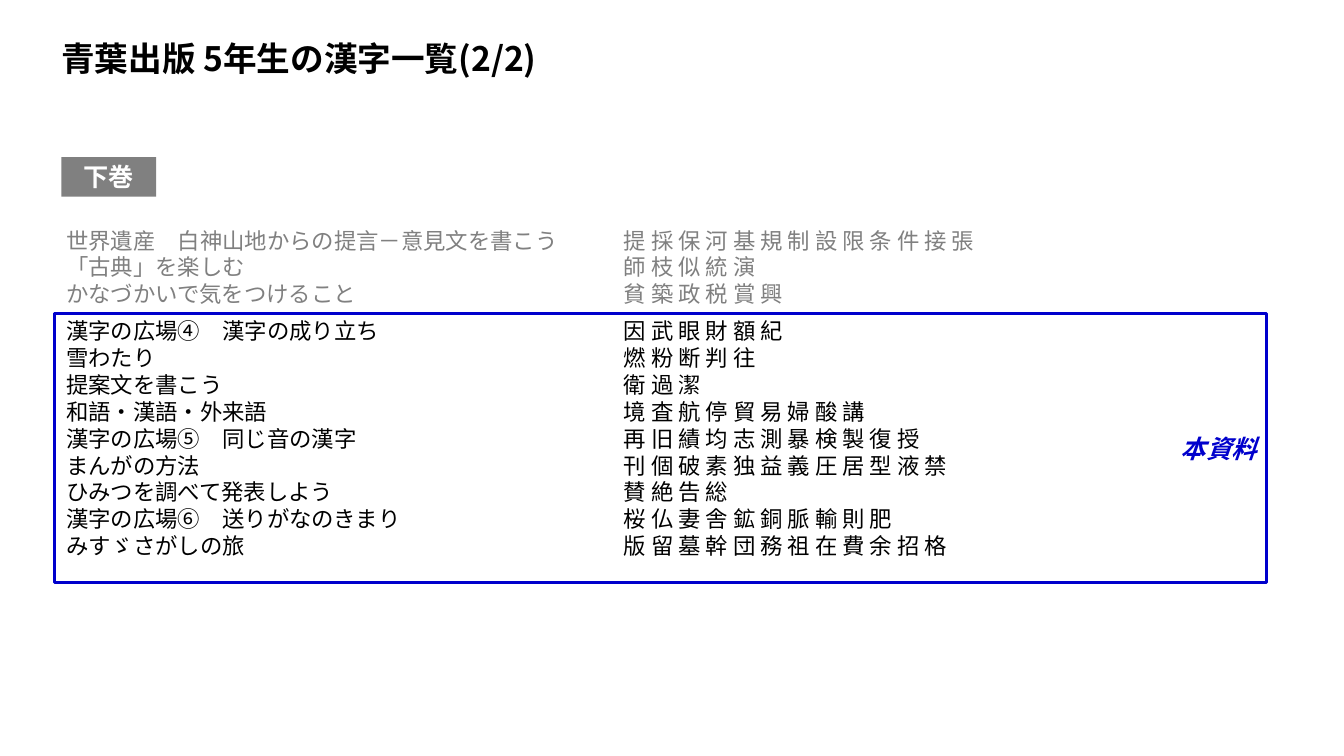
"""Build the slide listing fifth-grade kanji by textbook unit."""
from dataclasses import dataclass

from lxml.etree import SubElement
from pptx import Presentation
from pptx.dml.color import RGBColor
from pptx.enum.shapes import MSO_SHAPE
from pptx.enum.text import MSO_ANCHOR, PP_ALIGN
from pptx.oxml.ns import qn
from pptx.util import Inches, Pt


@dataclass(frozen=True)
class Theme:
    font: str = "Noto Sans CJK JP"
    black: str = "000000"
    gray: str = "808080"
    white: str = "FFFFFF"
    blue: str = "0000CC"
    title: int = 24
    label: int = 18
    body: int = 16
    leading: float = 1.2


theme = Theme()


def add_text(p, text, size=theme.body, color=theme.black, bold=False,
             italic=False, align=PP_ALIGN.LEFT, leading=None):
    p.alignment = align
    if leading:
        p.line_spacing = Pt(size * leading)
    r = p.add_run()
    r.text = text
    r.font.size = Pt(size)
    r.font.bold = bold
    r.font.italic = italic
    r.font.name = theme.font
    r.font.color.rgb = RGBColor.from_string(color)
    SubElement(r.font._element, qn("a:ea"), typeface=theme.font)


def add_box(left, top, width, height, fill=None, line=None):
    sp = slide.shapes.add_shape(MSO_SHAPE.RECTANGLE, Inches(left), Inches(top),
                                Inches(width), Inches(height))
    sp.shadow.inherit = False
    if fill:
        sp.fill.solid()
        sp.fill.fore_color.rgb = RGBColor.from_string(fill)
    else:
        sp.fill.background()
    if line:
        sp.line.color.rgb = RGBColor.from_string(line)
        sp.line.width = Pt(2)
    else:
        sp.line.fill.background()
    sp.text_frame.vertical_anchor = MSO_ANCHOR.MIDDLE
    return sp.text_frame.paragraphs[0]


prs = Presentation()
prs.slide_width, prs.slide_height = Inches(13.33), Inches(7.5)
slide = prs.slides.add_slide(prs.slide_layouts[6])

p = add_box(0.61, 1.56, 0.94, 0.39, fill=theme.gray)
add_text(p, "下巻", size=theme.label, color=theme.white, bold=True, align=PP_ALIGN.CENTER)

earlier_units = [
    ("世界遺産　白神山地からの提言－意見文を書こう", "提採保河基規制設限条件接張"),
    ("「古典」を楽しむ", "師枝似統演"),
    ("かなづかいで気をつけること", "貧築政税賞興"),
]
covered_units = [
    ("漢字の広場④　漢字の成り立ち", "因武眼財額紀"),
    ("雪わたり", "燃粉断判往"),
    ("提案文を書こう", "衛過潔"),
    ("和語・漢語・外来語", "境査航停貿易婦酸講"),
    ("漢字の広場⑤　同じ音の漢字", "再旧績均志測暴検製復授"),
    ("まんがの方法", "刊個破素独益義圧居型液禁"),
    ("ひみつを調べて発表しよう", "賛絶告総"),
    ("漢字の広場⑥　送りがなのきまり", "桜仏妻舎鉱銅脈輸則肥"),
    ("みすゞさがしの旅", "版留墓幹団務祖在費余招格"),
]

tf = slide.shapes.add_textbox(Inches(0.56), Inches(2.2), Inches(9.56), Inches(3.43)).text_frame
tf.word_wrap = True
for i, (unit, kanji) in enumerate(earlier_units + covered_units):
    p = tf.paragraphs[0] if i == 0 else tf.add_paragraph()
    color = theme.gray if i < len(earlier_units) else theme.black
    add_text(p, f"{unit}\t{' '.join(kanji)}", color=color, leading=theme.leading)
    if i == len(earlier_units):
        p.space_before = Pt(7.2)
    tabs = SubElement(p._p.get_or_add_pPr(), qn("a:tabLst"))
    SubElement(tabs, qn("a:tab"), pos=str(Inches(5.53)), algn="l")

tf = slide.shapes.add_textbox(Inches(0.51), Inches(0.33), Inches(9.69), Inches(0.5)).text_frame
tf.word_wrap = True
add_text(tf.paragraphs[0], "青葉出版 5年生の漢字一覧(2/2)", size=theme.title, bold=True,
         leading=theme.leading)

p = add_box(0.54, 3.11, 12.02, 2.67, line=theme.blue)
add_text(p, "本資料", size=theme.label, color=theme.blue, bold=True, italic=True,
         align=PP_ALIGN.RIGHT)

prs.save("out.pptx")
